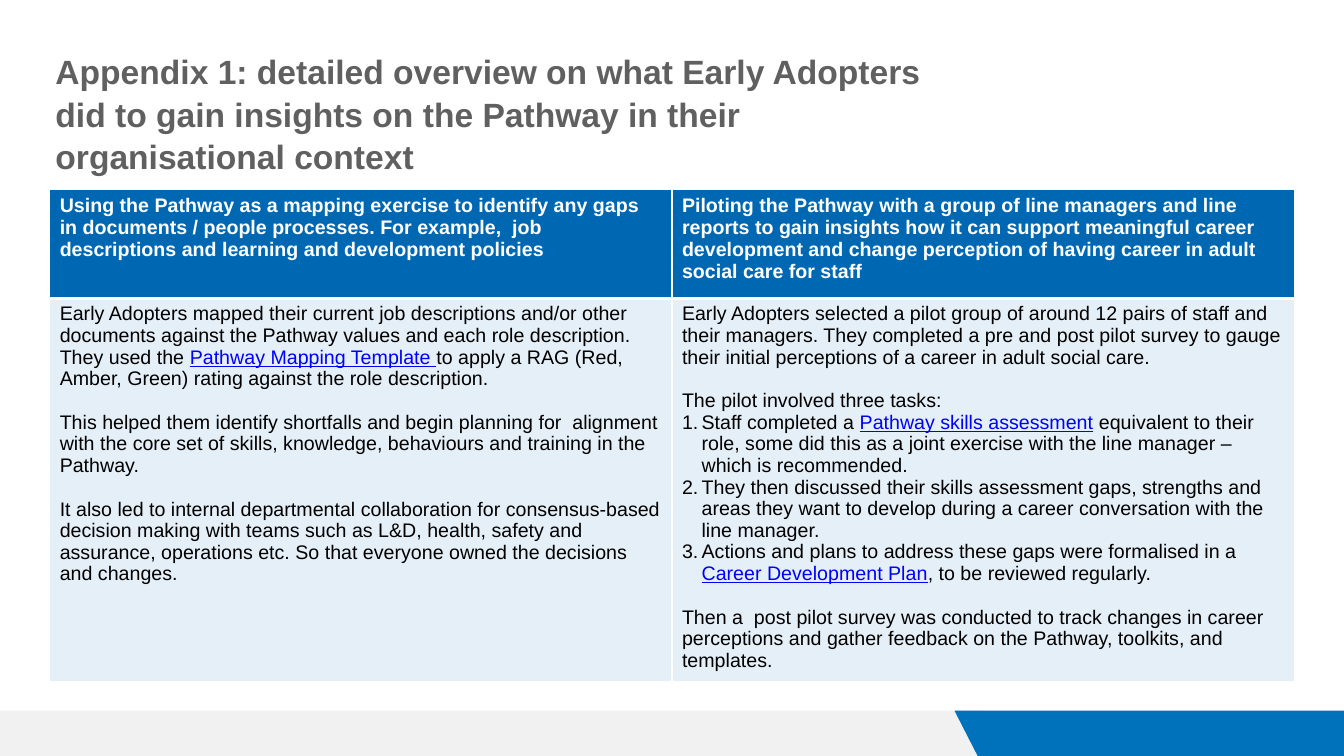
"""Build the appendix slide on what Early Adopters did with the Pathway."""
from lxml.etree import SubElement
from pptx import Presentation
from pptx.dml.color import RGBColor
from pptx.enum.text import MSO_ANCHOR, MSO_AUTO_SIZE as AutoSize, PP_ALIGN
from pptx.oxml import parse_xml
from pptx.oxml.ns import nsdecls, qn
from pptx.util import Pt

WHITE = RGBColor(0xFF, 0xFF, 0xFF)
BLACK = RGBColor(0, 0, 0)
TITLE_GREY = RGBColor(0x60, 0x60, 0x60)
BAR_GREY = RGBColor(0xCA, 0xCA, 0xCA)
BAR_BLUE = RGBColor(0x00, 0x71, 0xBB)
TABLE_BLUE = RGBColor(0x00, 0x68, 0xB3)
LINK_BLUE = RGBColor(0, 0, 0xFF)

WIDTH, HEIGHT, BAR_TOP = 960, 540, 507.6
TITLE = ("Appendix 1: detailed overview on what Early Adopters did to gain "
         "insights on the Pathway in their organisational context")
HEADERS = [
    "Using the Pathway as a mapping exercise to identify any gaps in documents / people "
    "processes. For example,  job descriptions and learning and development policies",
    "Piloting the Pathway with a group of line managers and line reports to gain insights how "
    "it can support meaningful career development and change perception of having career in "
    "adult social care for staff",
]
GAP = {"space_before": 15.8}
STEP = {"numbered": True}
MAPPING = [
    (["Early Adopters mapped their current job descriptions and/or other documents against the "
      "Pathway values and each role description. They used the ", "Pathway Mapping Template ",
      "to apply a RAG (Red, Amber, Green) rating against the role description."], {}),
    (["This helped them identify shortfalls and begin planning for  alignment with the core set "
      "of skills, knowledge, behaviours and training in the Pathway."], GAP),
    (["It also led to internal departmental collaboration for consensus-based decision making "
      "with teams such as L&D, health, safety and assurance, operations etc. So that everyone "
      "owned the decisions and changes."], GAP),
]
PILOT = [
    (["Early Adopters selected a pilot group of around 12 pairs of staff and their managers. "
      "They completed a pre and post pilot survey to gauge their initial perceptions of a "
      "career in adult social care."], {}),
    (["The pilot involved three tasks:"], GAP),
    (["Staff completed a ", "Pathway skills assessment", " equivalent to their role, some did "
      "this as a joint exercise with the line manager – which is recommended."], STEP),
    (["They then discussed their skills assessment gaps, strengths and areas they want to "
      "develop during a career conversation with the line manager."], STEP),
    (["Actions and plans to address these gaps were formalised in a ",
      "Career Development Plan", ", to be reviewed regularly."], STEP),
    (["Then a  post pilot survey was conducted to track changes in career perceptions and "
      "gather feedback on the Pathway, toolkits, and templates."], GAP),
]


class SlideBuilder:
    """Hold the slide and its style, and draw each kind of element."""

    font_name = "Arial"

    def __init__(self, slide):
        self.slide = slide

    def set_text(self, paragraph, segments, size=14, color=BLACK, bold=False,
                 space_before=0, line_spacing=1.0, numbered=False):
        """Fill a paragraph; every second segment is a link."""
        if numbered:
            properties = paragraph._p.get_or_add_pPr()
            properties.set("marL", str(Pt(14)))
            properties.set("indent", str(-Pt(14)))
            SubElement(properties, qn("a:buAutoNum"), type="arabicPeriod")
        paragraph.alignment = PP_ALIGN.LEFT
        paragraph.space_before = Pt(space_before)
        paragraph.line_spacing = line_spacing
        for index, segment in enumerate(segments):
            is_link = index % 2 == 1
            run = paragraph.add_run()
            run.text = segment
            run.font.name = self.font_name
            run.font.size = Pt(size)
            run.font.bold = bold
            run.font.underline = is_link
            run.font.color.rgb = LINK_BLUE if is_link else color

    def fill(self, target, color, opacity=100):
        """Give a shape or cell a solid fill."""
        target.fill.solid()
        target.fill.fore_color.rgb = color
        if opacity < 100:
            color_element = target.fill._xPr.find(".//" + qn("a:srgbClr"))
            SubElement(color_element, qn("a:alpha"), val=str(opacity * 1000))

    def title(self, text, left, top, width, height):
        """Place and format the title placeholder."""
        shape = self.slide.shapes.title
        shape.left, shape.top, shape.width, shape.height = map(Pt, (left, top, width, height))
        frame = shape.text_frame
        frame.word_wrap = True
        frame.auto_size = AutoSize.NONE
        frame.vertical_anchor = MSO_ANCHOR.TOP
        frame.margin_left = frame.margin_top = frame.margin_right = frame.margin_bottom = Pt(7.2)
        self.set_text(frame.paragraphs[0], [text], size=24, color=TITLE_GREY, bold=True,
                      line_spacing=1.05)

    def polygon(self, points, color, opacity=100):
        """Draw a filled closed outline."""
        start, *others = [(Pt(x), Pt(y)) for x, y in points]
        outline = self.slide.shapes.build_freeform(*start)
        outline.add_line_segments(others)
        shape = outline.convert_to_shape()
        shape.shadow.inherit = False
        shape.line.fill.background()
        self.fill(shape, color, opacity)

    def borders(self, cell, top, bottom):
        """Give a cell white borders, one point wide at the sides."""
        properties = cell._tc.get_or_add_tcPr()
        widths = {"lnL": 1, "lnR": 1, "lnT": top, "lnB": bottom}
        for index, (tag, width) in enumerate(widths.items()):
            properties.insert(index, parse_xml(
                f'<a:{tag} {nsdecls("a")} w="{Pt(width)}"><a:solidFill>'
                f'<a:srgbClr val="{WHITE}"/></a:solidFill></a:{tag}>'))

    def table(self, headers, bodies, left, top, column_width, row_heights):
        """Draw a table with one header row and one body row."""
        frame = self.slide.shapes.add_table(
            2, len(headers), Pt(left), Pt(top),
            Pt(column_width * len(headers)), Pt(sum(row_heights)))
        table = frame.table
        table.horz_banding = False
        for row, height in zip(table.rows, row_heights):
            row.height = Pt(height)
        for index, (header, body) in enumerate(zip(headers, bodies)):
            table.columns[index].width = Pt(column_width)
            head_cell, body_cell = table.cell(0, index), table.cell(1, index)
            self.fill(head_cell, TABLE_BLUE)
            self.borders(head_cell, top=1, bottom=3)
            self.set_text(head_cell.text_frame.paragraphs[0], [header], color=WHITE, bold=True)
            self.fill(body_cell, TABLE_BLUE, opacity=10)
            self.borders(body_cell, top=3, bottom=1)
            text_frame = body_cell.text_frame
            for number, (segments, style) in enumerate(body):
                paragraph = text_frame.add_paragraph() if number else text_frame.paragraphs[0]
                self.set_text(paragraph, segments, line_spacing=0.98, **style)


def main():
    """Build and save the slide."""
    presentation = Presentation()
    presentation.slide_width, presentation.slide_height = Pt(WIDTH), Pt(HEIGHT)
    builder = SlideBuilder(presentation.slides.add_slide(presentation.slide_layouts[5]))
    builder.polygon([(0, BAR_TOP), (702.7, BAR_TOP), (719.3, HEIGHT), (0, HEIGHT)],
                    BAR_GREY, opacity=25)
    builder.polygon([(681.8, BAR_TOP), (WIDTH, BAR_TOP), (WIDTH, HEIGHT), (698.4, HEIGHT)],
                    BAR_BLUE)
    builder.table(HEADERS, [MAPPING, PILOT], left=35.5, top=135.5, column_width=444.5,
                  row_heights=[77.8, 273.6])
    builder.title(TITLE, left=32.4, top=28, width=633.6, height=49.7)
    presentation.save("out.pptx")


if __name__ == "__main__":
    main()
